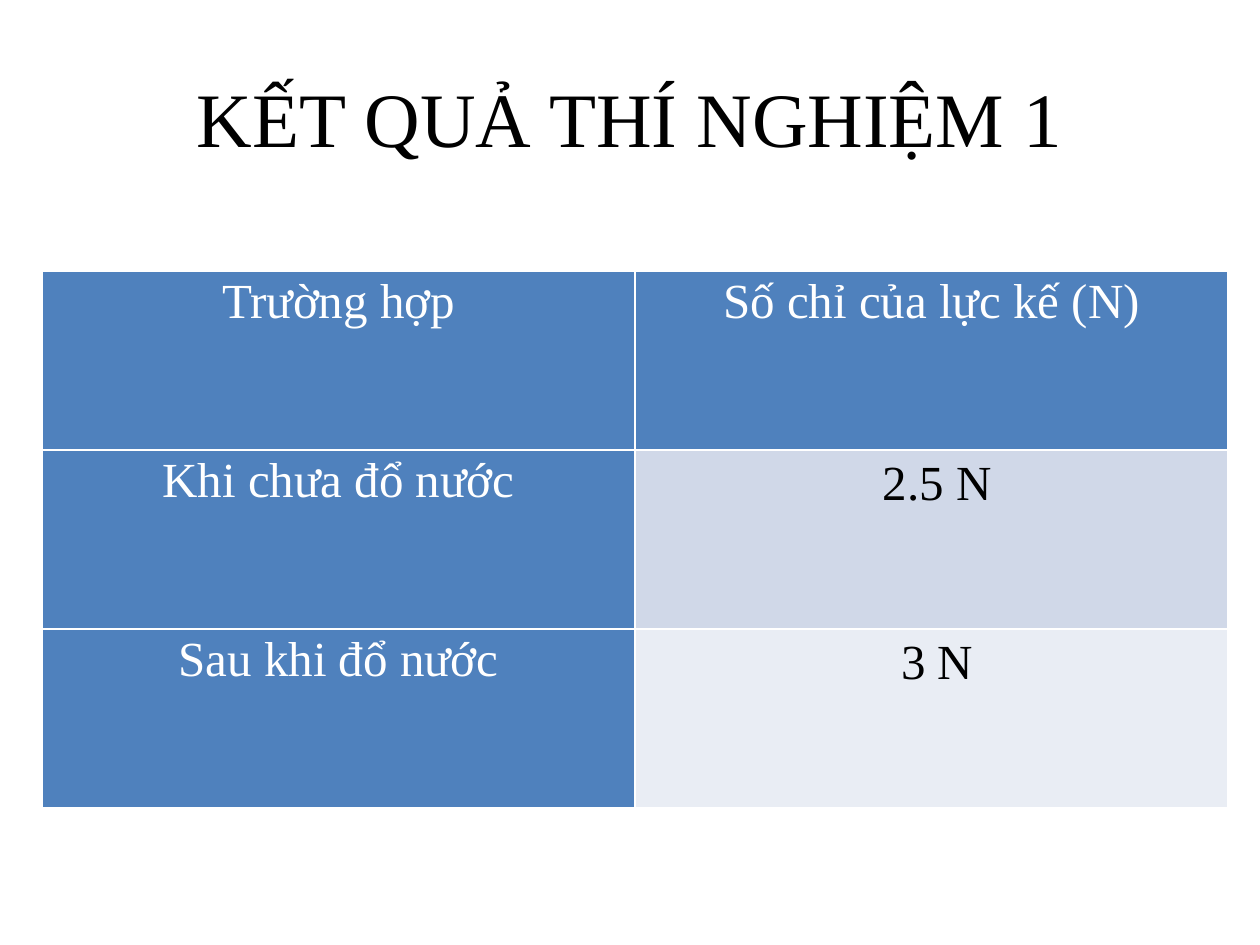
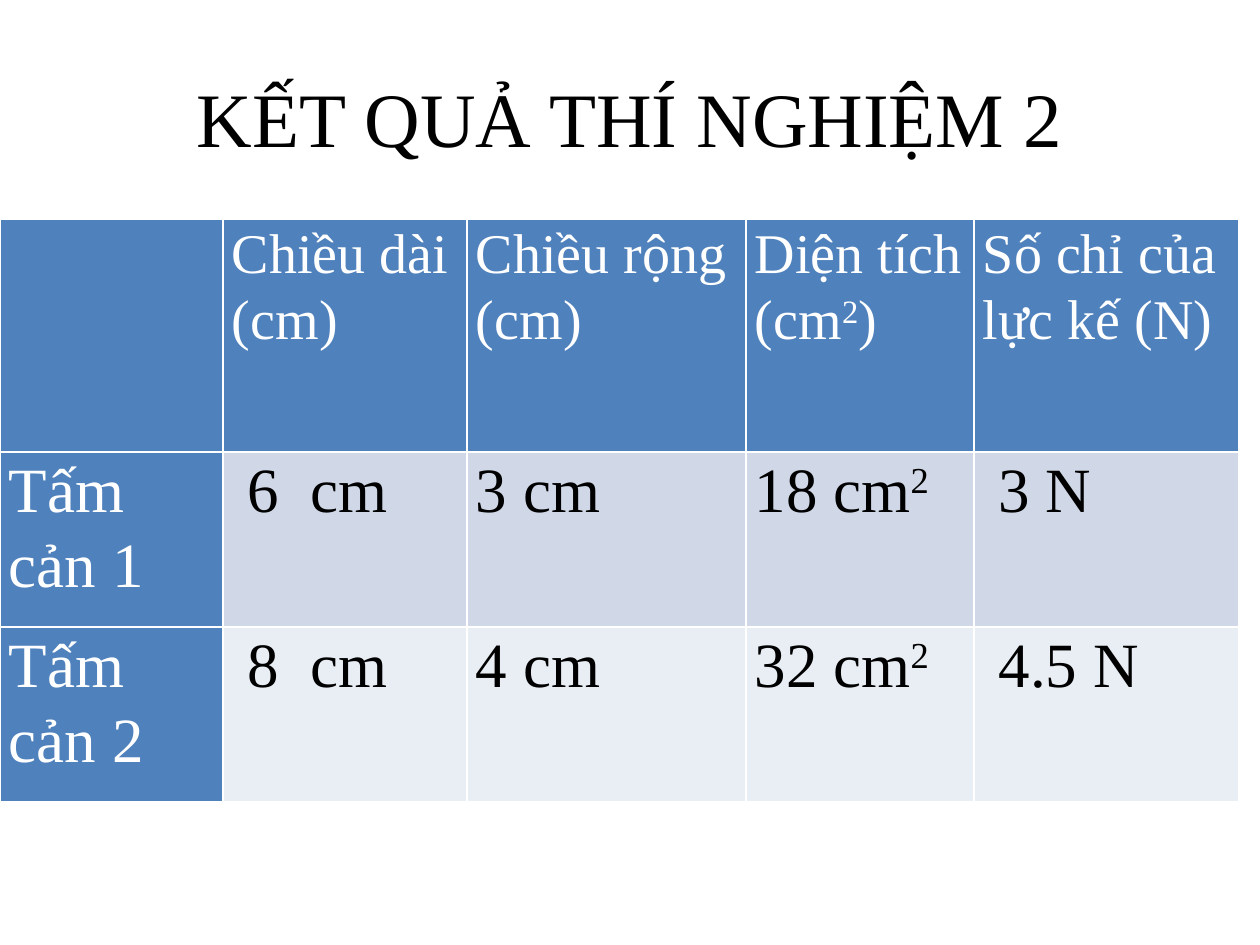
from lxml import etree
from pptx import Presentation
from pptx.dml.color import RGBColor
from pptx.enum.text import MSO_ANCHOR, PP_ALIGN
from pptx.oxml.ns import qn
from pptx.util import Emu, Pt

LEFT, CENTER = PP_ALIGN.LEFT, PP_ALIGN.CENTER
MIDDLE = MSO_ANCHOR.MIDDLE
BLACK = RGBColor(0x00, 0x00, 0x00)
WHITE = RGBColor(0xFF, 0xFF, 0xFF)
BLUE = RGBColor(0x4F, 0x81, 0xBD)
BANDS = [RGBColor(0xD0, 0xD8, 0xE8), RGBColor(0xE9, 0xED, 0xF4)]
SERIF, SANS = "Times New Roman", "Calibri"
PX_PER_INCH = 126


def px(count):
    return Emu(round(count * 914400 / PX_PER_INCH))


def add_borders(cell):
    properties = cell._tc.get_or_add_tcPr()
    for index, side in enumerate(("lnL", "lnR", "lnT", "lnB")):
        line = etree.Element(qn(f"a:{side}"), w=str(Pt(1)))
        fill = etree.SubElement(line, qn("a:solidFill"))
        etree.SubElement(fill, qn("a:srgbClr"), val=str(WHITE))
        properties.insert(index, line)


# "|" parts the spans of a line
RESULTS = [
    {
        "title": "KẾT QUẢ THÍ NGHIỆM 1",
        "corner": (42, 271),
        "columns": [593, 593],
        "rows": [179, 179, 179],
        "align": CENTER,
        "head_size": 28,
        "body_size": 28,
        "cells": [
            ["Trường hợp", "Số chỉ của lực kế (N)"],
            ["Khi chưa đổ nước", " |2.5 N"],
            ["Sau khi đổ nước", " |3 N"],
        ],
    },
    {
        "title": "KẾT QUẢ THÍ NGHIỆM 2",
        "corner": (0, 219),
        "columns": [223, 244, 279, 228, 265],
        "rows": [233, 175, 175],
        "align": LEFT,
        "head_size": 32,
        "body_size": 36,
        "cells": [
            ["", "Chiều dài (cm)", "Chiều rộng\n(cm)", "Diện tích (cm|2|)", "Số chỉ của lực kế (N)"],
            ["Tấm cản 1", " 6  cm", "3 cm", "18 cm|2", " 3 N"],
            ["Tấm cản 2", " 8  cm", "4 cm", "32 cm|2", " 4.5 N"],
        ],
    },
]

deck = Presentation()
deck.slide_width, deck.slide_height = px(1260), px(945)

for result in RESULTS:
    page = deck.slides.add_slide(deck.slide_layouts[5])
    title = page.shapes.title
    title.left, title.top, title.width, title.height = px(63), px(38), px(1134), px(157)
    title.text_frame.text = result["title"]
    title.text_frame.vertical_anchor = MIDDLE
    para = title.text_frame.paragraphs[0]
    para.alignment = CENTER
    para.font.name, para.font.size = SERIF, Pt(44)
    para.font.color.rgb = BLACK

    columns, rows = result["columns"], result["rows"]
    left, top = result["corner"]
    table = page.shapes.add_table(
        len(rows), len(columns), px(left), px(top), px(sum(columns)), px(sum(rows))
    ).table
    table.first_row = table.horz_banding = False
    for column, width in zip(table.columns, columns):
        column.width = px(width)

    for row_index, texts in enumerate(result["cells"]):
        table.rows[row_index].height = px(rows[row_index])
        size = result["body_size"] if row_index else result["head_size"]
        for column_index, text in enumerate(texts):
            cell = table.cell(row_index, column_index)
            is_value = row_index > 0 and column_index > 0
            cell.fill.solid()
            cell.fill.fore_color.rgb = BANDS[row_index - 1] if is_value else BLUE
            add_borders(cell)
            cell.margin_left = cell.margin_right = px(9)
            cell.margin_top = cell.margin_bottom = 0
            cell.text_frame.text = text.replace("|", "")
            for para, line in zip(cell.text_frame.paragraphs, text.split("\n")):
                para.alignment = result["align"]
                para.line_spacing = 1.07
                para.text = ""
                for part in filter(None, line.split("|")):
                    span = para.add_run()
                    span.text = part
                    span.font.name = SANS if part.isspace() else SERIF
                    span.font.size = Pt(size)
                    span.font.color.rgb = BLACK if is_value else WHITE
                    if part == "2":
                        span.font._element.set("baseline", "30000")

deck.save("out.pptx")
